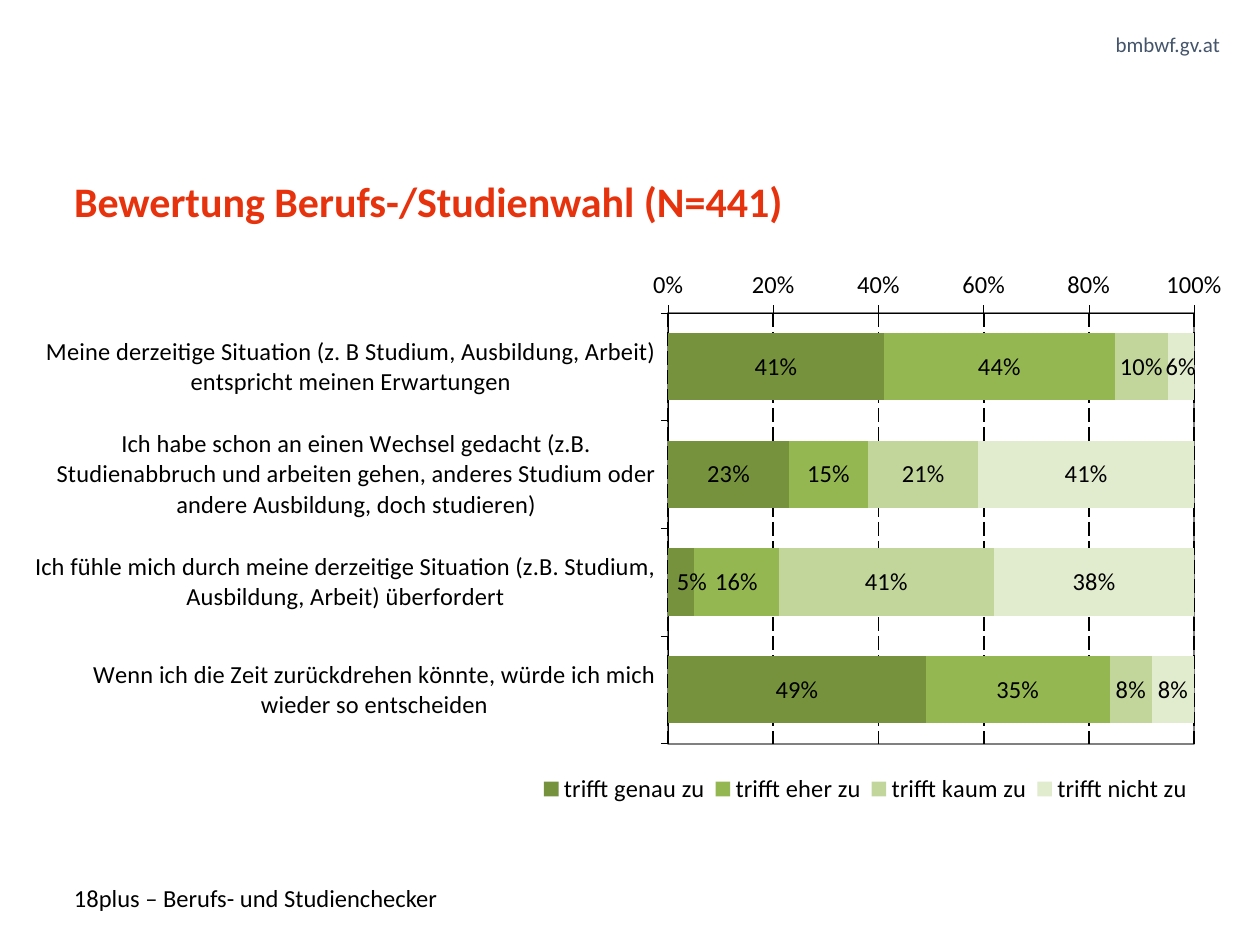
from lxml import etree
from pptx import Presentation
from pptx.chart.data import CategoryChartData as ChartData
from pptx.dml.color import RGBColor as Rgb
from pptx.enum.chart import XL_CHART_TYPE as Kind, XL_LEGEND_POSITION as Spot, XL_TICK_MARK as Tick
from pptx.enum.dml import MSO_LINE as Dash
from pptx.enum.text import MSO_ANCHOR as Anchor, PP_ALIGN as Align
from pptx.util import Pt

HEX = {"black": "000000", "white": "FFFFFF", "red": "E6330E", "slate": "44546A", "grey": "808080"}
FONT = "Calibri"
TEXTS = [
    ("bmbwf.gv.at", (916, 32, 304, 25), Align.RIGHT, Anchor.TOP, 1.0,
     {"size": Pt(12), "bold": False}, "slate"),
    ("Bewertung Berufs-/Studienwahl (N=441)", (74, 181, 1100, 115), Align.LEFT, Anchor.TOP, 0.9,
     {"size": Pt(24), "bold": True}, "red"),
    ("18plus – Berufs- und Studienchecker", (74, 880, 948, 36), Align.LEFT, Anchor.MIDDLE, 1.0,
     {"size": Pt(14), "bold": False}, "black"),
]
ITEMS = [
    "Meine derzeitige Situation (z. B Studium, Ausbildung, Arbeit) entspricht meinen Erwartungen",
    "Ich habe schon an einen Wechsel gedacht (z.B. Studienabbruch und arbeiten gehen, "
    "anderes Studium oder andere Ausbildung, doch studieren)",
    "Ich fühle mich durch meine derzeitige Situation (z.B. Studium, Ausbildung, Arbeit) überfordert",
    "Wenn ich die Zeit zurückdrehen könnte, würde ich mich wieder so entscheiden",
]
SERIES = [
    ("trifft genau zu", (0.41, 0.23, 0.05, 0.49), "76923C"),
    ("trifft eher zu", (0.44, 0.15, 0.16, 0.35), "95B751"),
    ("trifft kaum zu", (0.10, 0.21, 0.41, 0.08), "C2D69B"),
    ("trifft nicht zu", (0.06, 0.41, 0.38, 0.08), "E1EBCD"),
]
CHART = (35, 268, 1201, 576)
PLOT = (665, 313, 529, 431)
LEGEND = (530, 772, 668, 34)
SHIFT = 11
NS = ('xmlns:c="http://schemas.openxmlformats.org/drawingml/2006/chart" '
      'xmlns:a="http://schemas.openxmlformats.org/drawingml/2006/main"')


def px(*nums):
    return [round(n * 914400 / 126) for n in nums]


def color(name):
    return Rgb.from_string(HEX.get(name, name))


def style(obj, **vals):
    for key, val in vals.items():
        setattr(obj, key, val)


def node(xml):
    head, tail = xml.split(">", 1)
    return etree.fromstring(f"{head} {NS}>{tail}")


def layout(box, inner=""):
    x, y, w, h = CHART
    left, top, wide, high = box
    vals = {"x": (left - x) / w, "y": (top - y) / h, "w": wide / w, "h": high / h}
    modes = '<c:xMode val="edge"/><c:yMode val="edge"/>'
    parts = "".join(f'<c:{k} val="{v:.3f}"/>' for k, v in vals.items())
    return node(f"<c:layout><c:manualLayout>{inner}{modes}{parts}</c:manualLayout></c:layout>")


def add_text(slide, text, box, align, anchor, space, font, tint):
    frame = slide.shapes.add_textbox(*px(*box)).text_frame
    style(frame, word_wrap=True, vertical_anchor=anchor,
          margin_left=0, margin_right=0, margin_top=0, margin_bottom=0)
    para = frame.paragraphs[0]
    style(para, alignment=align, line_spacing=space)
    run = para.add_run()
    run.text = text
    style(run.font, name=FONT, **font)
    run.font.color.rgb = color(tint)


def add_bars(slide):
    data = ChartData(number_format="0%")
    data.categories = ITEMS
    for name, vals, _ in SERIES:
        data.add_series(name, vals)
    chart = slide.shapes.add_chart(Kind.BAR_STACKED, *px(*CHART), data).chart
    style(chart, has_title=False, has_legend=True)
    style(chart.font, name=FONT, size=Pt(14))
    chart.font.color.rgb = color("black")
    plot = chart.plots[0]
    style(plot, gap_width=60, overlap=100, vary_by_categories=False)
    for bars, (_, _, tint) in zip(plot.series, SERIES):
        bars.format.fill.solid()
        bars.format.fill.fore_color.rgb = color(tint)
        style(bars.data_labels, show_value=True, number_format="0%", number_format_is_linked=False)
    flags = "".join(f'<c:show{k} val="{int(k == "Val")}"/>'
                    for k in ("LegendKey", "Val", "CatName", "SerName", "Percent", "BubbleSize"))
    label = node('<c:dLbl><c:idx val="2"/><c:layout><c:manualLayout>'
                 f'<c:x val="{SHIFT / CHART[2]:.3f}"/><c:y val="0"/></c:manualLayout></c:layout>'
                 f'<c:numFmt formatCode="0%" sourceLinked="0"/>{flags}</c:dLbl>')
    plot.series[0].data_labels._element.insert(0, label)

    cat, val = chart.category_axis, chart.value_axis
    style(cat, reverse_order=True, has_major_gridlines=False)
    style(val, minimum_scale=0, maximum_scale=1, major_unit=0.2, has_major_gridlines=True)
    style(val.tick_labels, number_format="0%", number_format_is_linked=False)
    grid = val.major_gridlines.format.line
    for axis in (cat, val):
        style(axis, major_tick_mark=Tick.OUTSIDE, minor_tick_mark=Tick.NONE)
    for line, width in ((cat.format.line, 0.25), (val.format.line, 0.25), (grid, 1)):
        line.color.rgb = color("black")
        line.width = Pt(width)
    grid.dash_style = Dash.LONG_DASH

    style(chart.legend, position=Spot.BOTTOM, include_in_layout=False)
    chart.legend._element.find("{*}legendPos").addnext(layout(LEGEND))
    area = chart._chartSpace.find(".//{*}plotArea")
    for old in area.findall("{*}layout"):
        area.remove(old)
    area.insert(0, layout(PLOT, '<c:layoutTarget val="inner"/>'))
    fill, edge = (f'<a:solidFill><a:srgbClr val="{HEX[k]}"/></a:solidFill>' for k in ("white", "grey"))
    area.append(node(f'<c:spPr>{fill}<a:ln w="12700">{edge}</a:ln></c:spPr>'))


def main():
    deck = Presentation()
    deck.slide_width, deck.slide_height = px(1260, 945)
    slide = deck.slides.add_slide(deck.slide_layouts[6])
    add_bars(slide)
    for item in TEXTS:
        add_text(slide, *item)
    deck.save("out.pptx")


if __name__ == "__main__":
    main()
